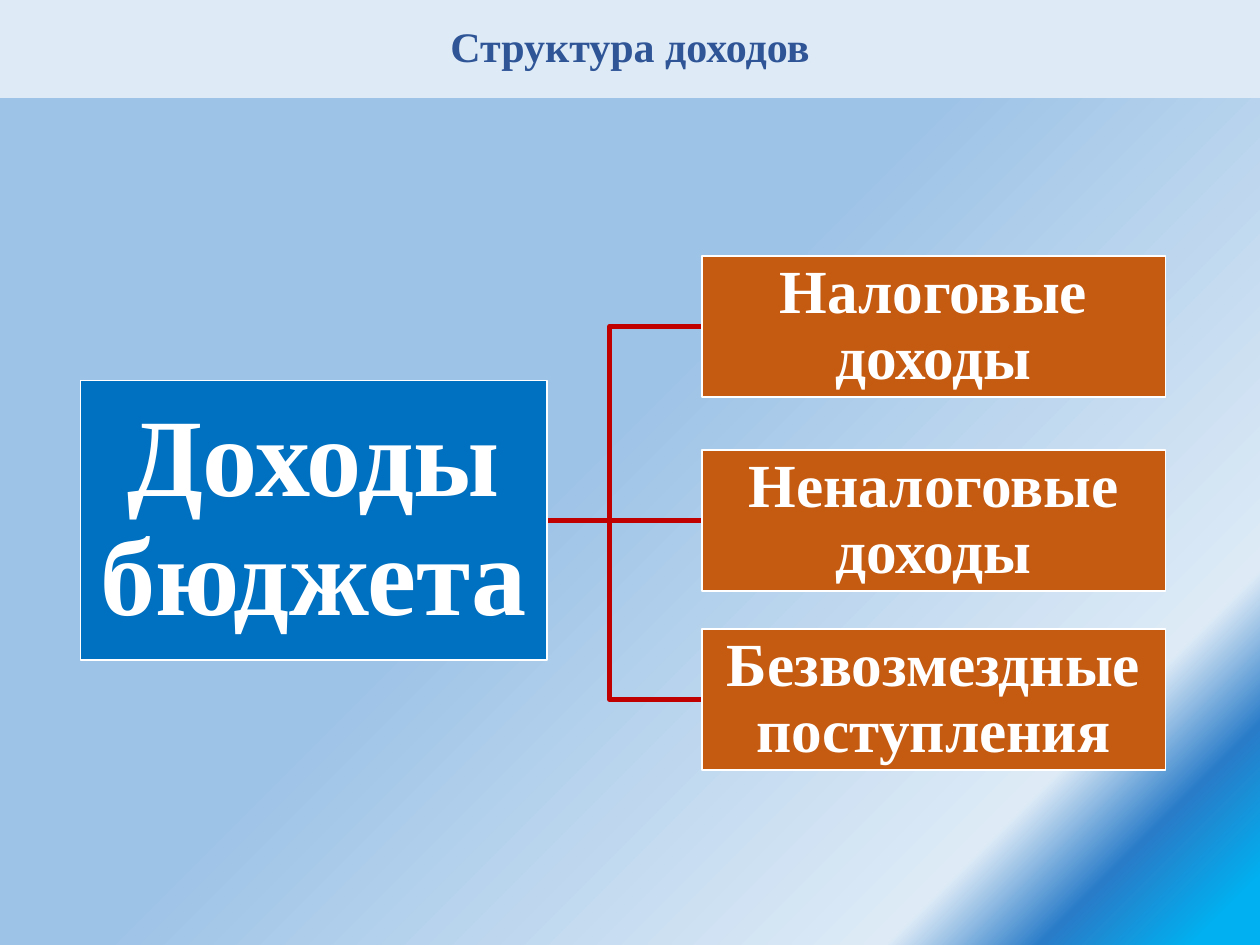
from lxml import etree
from pptx import Presentation
from pptx.dml.color import RGBColor
from pptx.enum import shapes, text
from pptx.oxml.ns import qn
from pptx.util import Inches, Pt

# Content
TITLE = "Структура доходов"
ROOT = "Доходы бюджета"
BRANCHES = [  # wording, top
    ("Налоговые доходы", 2.03),
    ("Неналоговые доходы", 3.57),
    ("Безвозмездные поступления", 4.99),
]

# Format
COLORS = {
    "band": "DEEBF7", "title": "2F5597", "root": "0070C0",
    "branch": "C55A11", "link": "C00000", "white": "FFFFFF",
}
BACKGROUND_STOPS = [(3, "00B0F0"), (10, "297CC8"), (17, "DEEBF7"),
                    (53, "9DC3E6"), (96, "9DC3E6")]
FONT = "Times New Roman"
WIDTH, HEIGHT = 10, 7.5
ROOT_BOX = (0.64, 3.02, 3.7, 2.22)
BRANCH_LEFT, BRANCH_WIDTH, BRANCH_HEIGHT = 5.57, 3.68, 1.12
LINK_START, LINK_TURN = 4.11, 4.84


def color(name):
    return RGBColor.from_string(COLORS[name])


def set_background(page):
    """Circular gradient spreading from the bottom right corner."""
    page.background.fill.gradient()
    gradient = next(page.element.iter(qn("a:gradFill")))
    for child in list(gradient):
        gradient.remove(child)
    stops = etree.SubElement(gradient, qn("a:gsLst"))
    for position, value in BACKGROUND_STOPS:
        stop = etree.SubElement(stops, qn("a:gs"), pos=str(position * 1000))
        etree.SubElement(stop, qn("a:srgbClr"), val=value)
    spread = etree.SubElement(gradient, qn("a:path"), path="circle")
    etree.SubElement(spread, qn("a:fillToRect"), l="100000", t="100000")


def add_box(page, wording, place, fill, line, line_width, size, ink, inset):
    box = page.shapes.add_shape(shapes.MSO_SHAPE.RECTANGLE, *map(Inches, place))
    box.shadow.inherit = False
    box.fill.solid()
    box.fill.fore_color.rgb = color(fill)
    box.line.color.rgb = color(line)
    box.line.width = Pt(line_width)

    frame = box.text_frame
    frame.word_wrap = True
    frame.vertical_anchor = text.MSO_ANCHOR.MIDDLE
    for side in ("left", "top", "right", "bottom"):
        setattr(frame, f"margin_{side}", Inches(inset))
    para = frame.paragraphs[0]
    para.alignment = text.PP_ALIGN.CENTER
    para.line_spacing = 0.9
    span = para.add_run()
    span.text = wording
    span.font.color.rgb = color(ink)
    for name, value in {"name": FONT, "size": Pt(size), "bold": True}.items():
        setattr(span.font, name, value)


def add_link(page, start_y, end_y):
    points = [(LINK_START, start_y), (LINK_TURN, start_y),
              (LINK_TURN, end_y), (BRANCH_LEFT, end_y)]
    corners = [(Inches(x), Inches(y)) for x, y in points]
    builder = page.shapes.build_freeform(*corners[0])
    builder.add_line_segments(corners[1:], close=False)
    link = builder.convert_to_shape()
    link.shadow.inherit = False
    link.fill.background()
    link.line.color.rgb = color("link")
    link.line.width = Pt(3)


def main():
    deck = Presentation()
    deck.slide_width, deck.slide_height = Inches(WIDTH), Inches(HEIGHT)
    page = deck.slides.add_slide(deck.slide_layouts[6])
    set_background(page)

    # Title band
    add_box(page, TITLE, (0, 0, WIDTH, 0.77), "band", "band", 0.75, 24, "title", 0.05)

    # Links go behind the boxes
    root_middle = ROOT_BOX[1] + ROOT_BOX[3] / 2
    for _, top in reversed(BRANCHES):
        add_link(page, root_middle, top + BRANCH_HEIGHT / 2)

    # Root and its branches
    add_box(page, ROOT, ROOT_BOX, "root", "white", 1, 63, "white", 0.04)
    for wording, top in BRANCHES:
        place = (BRANCH_LEFT, top, BRANCH_WIDTH, BRANCH_HEIGHT)
        add_box(page, wording, place, "branch", "white", 1, 35, "white", 0.02)

    deck.save("out.pptx")


if __name__ == "__main__":
    main()
